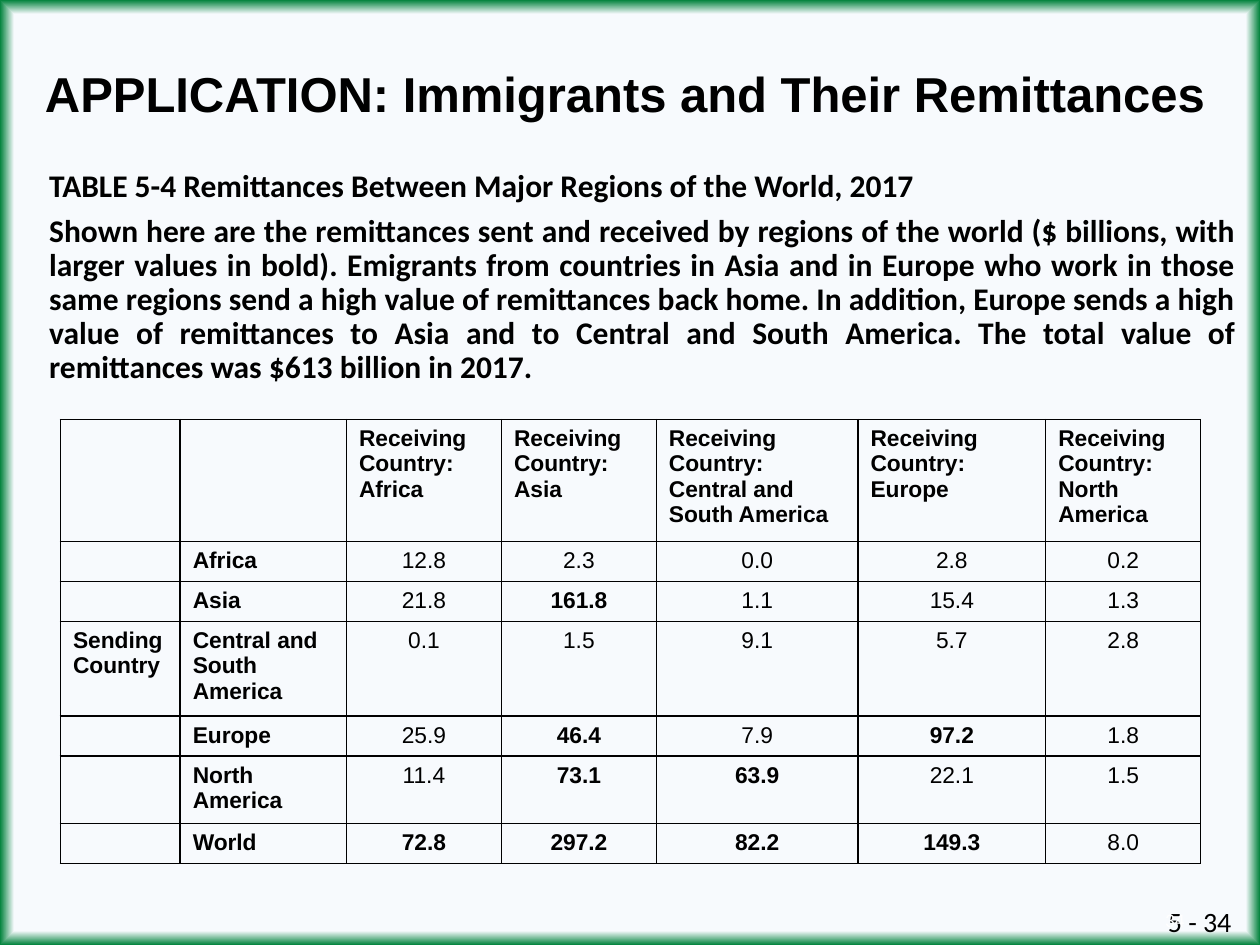
from lxml import etree
from pptx import Presentation
from pptx.dml.color import RGBColor
from pptx.enum.text import MSO_ANCHOR, MSO_AUTO_SIZE, PP_ALIGN
from pptx.oxml import parse_xml
from pptx.oxml.ns import nsdecls, qn
from pptx.util import Inches, Pt

LEFT, CENTER, RIGHT = PP_ALIGN.LEFT, PP_ALIGN.CENTER, PP_ALIGN.RIGHT
JUSTIFY = PP_ALIGN.JUSTIFY
TOP, MIDDLE = MSO_ANCHOR.TOP, MSO_ANCHOR.MIDDLE
NO_FIT = MSO_AUTO_SIZE.NONE

COLORS = {"ink": "000000", "white": "FFFFFF", "paper": "F7FAFD",
          "green": "00823B", "sky": "B5D2EC", "pale": "CEE1F2"}
BACKGROUND_STOPS = [(97, "paper"), (100, "green"), (100, "sky"), (100, "pale")]

TITLE = "APPLICATION: Immigrants and Their Remittances"
BODY = [
    "TABLE 5-4 Remittances Between Major Regions of the World, 2017",
    "Shown here are the remittances sent and received by regions of the world "
    "($ billions, with larger values in bold). Emigrants from countries in Asia "
    "and in Europe who work in those same regions send a high value of "
    "remittances back home. In addition, Europe sends a high value of "
    "remittances to Asia and to Central and South America. The total value of "
    "remittances was $613 billion in 2017.",
]
REGIONS = ["Africa", "Asia", "Central and South America", "Europe", "North America"]
REMITTANCES = [
    ("Africa", ["12.8", "2.3", "0.0", "2.8", "0.2"]),
    ("Asia", ["21.8", "161.8", "1.1", "15.4", "1.3"]),
    ("Central and South America", ["0.1", "1.5", "9.1", "5.7", "2.8"]),
    ("Europe", ["25.9", "46.4", "7.9", "97.2", "1.8"]),
    ("North America", ["11.4", "73.1", "63.9", "22.1", "1.5"]),
    ("World", ["72.8", "297.2", "82.2", "149.3", "8.0"]),
]
BOLD_FROM = 40  # values above this, in $ billions, are bold
COLUMN_WIDTHS = [0.95, 1.32, 1.23, 1.23, 1.6, 1.49, 1.23]
ROW_HEIGHTS = [0.9, 0.3, 0.3, 0.71, 0.3, 0.51, 0.3]
CELL_SIZE = 13


def add_span(para, text, size, font, color="ink", bold=False):
    span = para.add_run()
    span.text = text
    span.font.size = Pt(size)
    span.font.name = font
    span.font.bold = bold
    span.font.color.rgb = RGBColor.from_string(COLORS[color])


def place(shape, box):
    shape.left, shape.top, shape.width, shape.height = map(Inches, box)


def paint_background(page):
    """Pale page with a green glow along its edges."""
    stops = "".join(
        f'<a:gs pos="{percent * 1000}"><a:srgbClr val="{COLORS[name]}"/></a:gs>'
        for percent, name in BACKGROUND_STOPS)
    background = parse_xml(
        f'<p:bg {nsdecls("p", "a")}><p:bgPr><a:gradFill rotWithShape="1">'
        f'<a:gsLst>{stops}</a:gsLst><a:path path="shape">'
        '<a:fillToRect l="50000" t="50000" r="50000" b="50000"/></a:path>'
        '</a:gradFill><a:effectLst/></p:bgPr></p:bg>')
    page.element.cSld.insert(0, background)


def fill_title(page, box):
    title = page.shapes.title
    place(title, box)
    frame = title.text_frame
    frame.auto_size = NO_FIT
    frame.vertical_anchor = MIDDLE
    para = frame.paragraphs[0]
    para.alignment = CENTER
    para.line_spacing = 0.9
    add_span(para, TITLE, 28, "Arial", bold=True)


def fill_body(page, box):
    body = page.placeholders[1]
    place(body, box)
    frame = body.text_frame
    frame.auto_size = NO_FIT
    frame.vertical_anchor = TOP
    for index, text in enumerate(BODY):
        para = frame.add_paragraph() if index else frame.paragraphs[0]
        properties = para._p.get_or_add_pPr()
        properties.set("marL", "0")
        properties.set("indent", "0")
        etree.SubElement(properties, qn("a:buNone"))
        para.alignment = JUSTIFY
        para.line_spacing = 0.9
        para.space_before = Pt(6.2 if index else 0)
        add_span(para, text, 18, "Calibri", bold=True)


def border_cell(cell):
    properties = cell._tc.get_or_add_tcPr()
    for index, side in enumerate(("lnL", "lnR", "lnT", "lnB")):
        properties.insert(index, parse_xml(
            f'<a:{side} {nsdecls("a")} w="{Pt(1)}"><a:solidFill>'
            f'<a:srgbClr val="{COLORS["ink"]}"/></a:solidFill></a:{side}>'))


def fill_cell(cell, text, bold, alignment):
    cell.fill.background()
    border_cell(cell)
    for index, line in enumerate(text.split("\n")):
        frame = cell.text_frame
        para = frame.add_paragraph() if index else frame.paragraphs[0]
        para.alignment = alignment
        if line:
            add_span(para, line, CELL_SIZE, "Arial", bold=bold)
        else:
            ending = etree.SubElement(para._p, qn("a:endParaRPr"))
            ending.set("sz", str(CELL_SIZE * 100))


def add_remittance_table(page, left, top):
    rows = [["", ""] + [f"Receiving Country: {region}" for region in REGIONS]]
    for sender, values in REMITTANCES:
        group = "Sending\nCountry" if sender == REGIONS[2] else ""
        rows.append([group, sender] + values)

    table = page.shapes.add_table(
        len(rows), len(COLUMN_WIDTHS), Inches(left), Inches(top),
        Inches(sum(COLUMN_WIDTHS)), Inches(sum(ROW_HEIGHTS))).table
    table.first_row = table.horz_banding = False
    for column, width in zip(table.columns, COLUMN_WIDTHS):
        column.width = Inches(width)
    for row, height in zip(table.rows, ROW_HEIGHTS):
        row.height = Inches(height)

    for r, texts in enumerate(rows):
        for c, text in enumerate(texts):
            is_value = r > 0 and c > 1
            bold = not is_value or float(text) > BOLD_FROM
            fill_cell(table.cell(r, c), text, bold, CENTER if is_value else LEFT)


def add_page_number(page, box, text, size, color, alignment, anchor, wrap):
    number = page.shapes.add_textbox(*map(Inches, box))
    frame = number.text_frame
    frame.word_wrap = wrap
    frame.vertical_anchor = anchor
    para = frame.paragraphs[0]
    para.alignment = alignment
    add_span(para, text, size, "Calibri", color)


def main():
    deck = Presentation()
    deck.slide_width, deck.slide_height = Inches(10), Inches(7.5)
    page = deck.slides.add_slide(deck.slide_layouts[1])
    paint_background(page)
    add_page_number(page, (9.17, 7.13, 0.75, 0.37), "5 - 34", 16, "ink",
                    LEFT, TOP, False)
    add_page_number(page, (7.17, 7.1, 2.33, 0.4), "34", 11, "white",
                    RIGHT, MIDDLE, True)
    fill_title(page, (0.21, 0.14, 9.5, 1.25))
    fill_body(page, (0.29, 1.3, 9.62, 2.28))
    add_remittance_table(page, 0.48, 3.33)
    deck.save("out.pptx")


if __name__ == "__main__":
    main()
